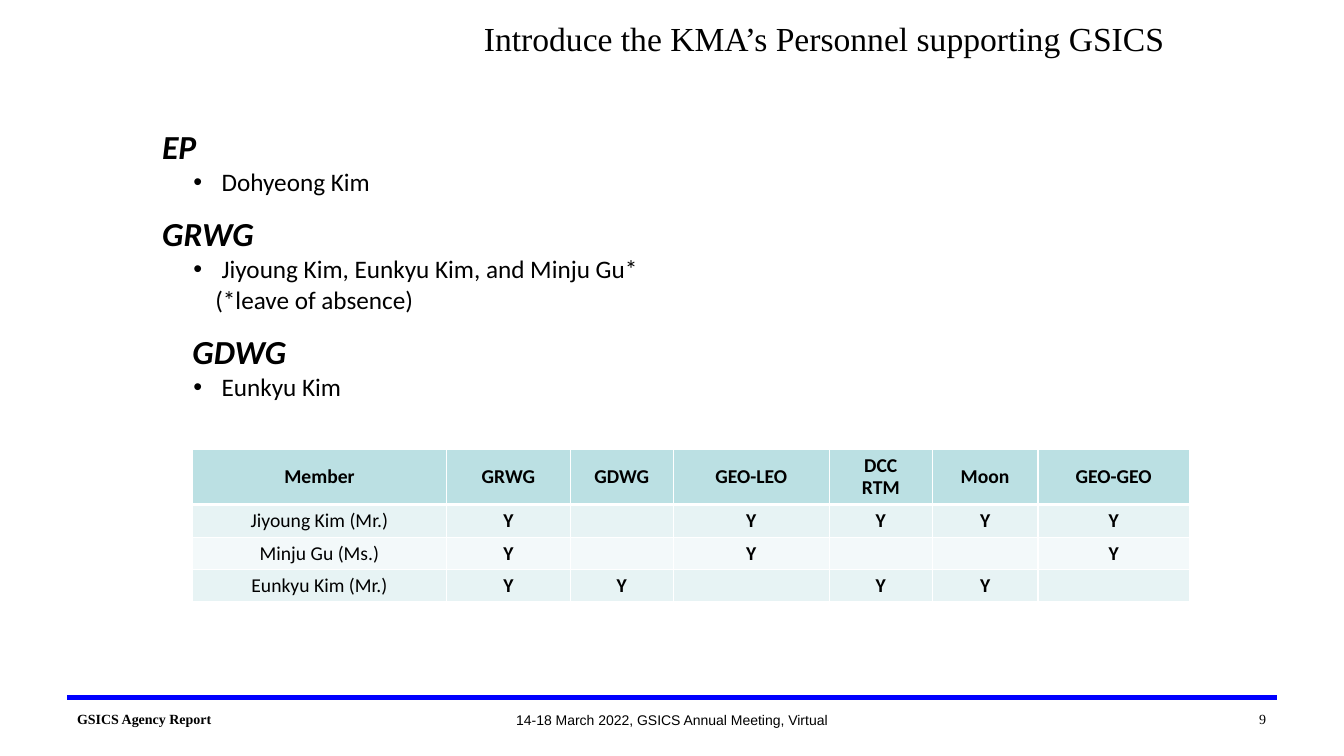
"""Build the slide that introduces the agency personnel supporting GSICS."""
from dataclasses import dataclass

from lxml import etree
from pptx import Presentation
from pptx.dml.color import RGBColor
from pptx.enum.shapes import MSO_CONNECTOR
from pptx.enum.text import MSO_ANCHOR, PP_ALIGN
from pptx.oxml.ns import qn
from pptx.util import Pt

LEFT, CENTER, RIGHT = PP_ALIGN.LEFT, PP_ALIGN.CENTER, PP_ALIGN.RIGHT
MIDDLE, TOP = MSO_ANCHOR.MIDDLE, MSO_ANCHOR.TOP
STRAIGHT = MSO_CONNECTOR.STRAIGHT


@dataclass(frozen=True)
class Theme:
    text: str = "000000"
    rule: str = "0000FF"
    border: str = "FFFFFF"
    header_fill: str = "BBE0E3"
    band_fills: tuple = ("E7F3F4", "F3F9FA")
    serif: str = "Times New Roman"
    sans: str = "Arial"
    body: str = "Calibri"
    title_size: int = 24
    heading_size: int = 24
    name_size: int = 18
    table_size: int = 14
    footer_size: int = 10


theme = Theme()


def add_run(paragraph, text, font, size, bold=False, italic=False):
    run = paragraph.add_run()
    run.text = text
    run.font.name = font
    run.font.size = Pt(size)
    run.font.bold = bold
    run.font.italic = italic
    run.font.color.rgb = RGBColor.from_string(theme.text)


def add_text_frame(slide, left, top, width, height):
    text_box = slide.shapes.add_textbox(Pt(left), Pt(top), Pt(width), Pt(height))
    text_box.text_frame.word_wrap = True
    return text_box.text_frame


presentation = Presentation()
presentation.slide_width = Pt(960)
presentation.slide_height = Pt(540)
slide = presentation.slides.add_slide(presentation.slide_layouts[6])

footer_rule = slide.shapes.add_connector(STRAIGHT, Pt(48), Pt(498.2), Pt(912), Pt(498.2))
footer_rule.line.color.rgb = RGBColor.from_string(theme.rule)
footer_rule.line.width = Pt(3)
etree.SubElement(footer_rule._element.spPr, qn("a:effectLst"))

single_lines = [
    ("14-18 March 2022, GSICS Annual Meeting, Virtual",
     (263.5, 504.5, 432.7, 18), CENTER, theme.sans, theme.footer_size, False),
    ("GSICS Agency Report", (48, 504, 216.7, 18), LEFT, theme.serif, theme.footer_size, True),
    ("Introduce the KMA’s Personnel supporting GSICS",
     (284.4, 9.4, 608.4, 43.9), CENTER, theme.serif, theme.title_size, False),
    ("9", (768.2, 504, 143.3, 18), RIGHT, theme.serif, theme.footer_size, False),
]
for text, box, alignment, font, size, bold in single_lines:
    paragraph = add_text_frame(slide, *box).paragraphs[0]
    paragraph.alignment = alignment
    add_run(paragraph, text, font, size, bold)

groups = [
    ("EP", 0, ["Dohyeong Kim"], None),
    ("GRWG", 0, ["Jiyoung Kim, Eunkyu Kim, and Minju Gu*"], "(*leave of absence)"),
    ("GDWG", 21.6, ["Eunkyu Kim"], None),
]
groups_frame = add_text_frame(slide, 108.7, 86.4, 740.9, 203)
for index, (heading, heading_indent, members, remark) in enumerate(groups):
    paragraph = groups_frame.add_paragraph() if index else groups_frame.paragraphs[0]
    if index:
        paragraph.space_before = Pt(12)
    paragraph._p.get_or_add_pPr().set("marL", str(Pt(heading_indent)))
    add_run(paragraph, heading, theme.body, theme.heading_size, True, True)
    for member in members:
        paragraph = groups_frame.add_paragraph()
        properties = paragraph._p.get_or_add_pPr()
        properties.set("marL", str(Pt(42.5)))
        properties.set("indent", str(Pt(-20.2)))
        etree.SubElement(properties, qn("a:buFont"), typeface=theme.sans)
        etree.SubElement(properties, qn("a:buChar"), char="•")
        add_run(paragraph, member, theme.body, theme.name_size)
    if remark:
        paragraph = groups_frame.add_paragraph()
        paragraph._p.get_or_add_pPr().set("marL", str(Pt(38)))
        add_run(paragraph, remark, theme.body, theme.name_size)

rows = [
    ["Member", "GRWG", "GDWG", "GEO-LEO", "DCC\nRTM", "Moon", "GEO-GEO"],
    ["Jiyoung Kim (Mr.)", "Y", "", "Y", "Y", "Y", "Y"],
    ["Minju Gu (Ms.)", "Y", "", "Y", "", "", "Y"],
    ["Eunkyu Kim (Mr.)", "Y", "Y", "", "Y", "Y", ""],
]
column_widths = [181.4, 88.6, 73.4, 111.6, 73.4, 75.6, 108]
row_heights = [39.3, 23.8, 22.8, 22.8]
table = slide.shapes.add_table(
    len(rows), len(column_widths), Pt(137.5), Pt(321.1),
    Pt(sum(column_widths)), Pt(sum(row_heights))).table
table.first_row = False
table.horz_banding = False
for column, width in zip(table.columns, column_widths):
    column.width = Pt(width)

for row_index, values in enumerate(rows):
    table.rows[row_index].height = Pt(row_heights[row_index])
    is_header = row_index == 0
    fill = theme.header_fill if is_header else theme.band_fills[(row_index - 1) % 2]
    border_widths = {"lnL": 1, "lnR": 1, "lnT": 3 if row_index == 1 else 1,
                     "lnB": 3 if is_header else 1}
    for column_index, value in enumerate(values):
        cell = table.cell(row_index, column_index)
        cell.margin_left = cell.margin_right = Pt(3.6)
        cell.margin_top = cell.margin_bottom = Pt(2.88)
        cell.vertical_anchor = MIDDLE if is_header else TOP
        cell_properties = cell._tc.get_or_add_tcPr()
        for side, width in border_widths.items():
            border = etree.SubElement(cell_properties, qn(f"a:{side}"), w=str(Pt(width)))
            border_fill = etree.SubElement(border, qn("a:solidFill"))
            etree.SubElement(border_fill, qn("a:srgbClr"), val=theme.border)
        cell.fill.solid()
        cell.fill.fore_color.rgb = RGBColor.from_string(fill)
        for line_index, line in enumerate(value.split("\n")):
            text_frame = cell.text_frame
            paragraph = text_frame.add_paragraph() if line_index else text_frame.paragraphs[0]
            paragraph.alignment = CENTER
            if is_header:
                paragraph.line_spacing = 0.9
            if line:
                add_run(paragraph, line, theme.body, theme.table_size,
                        is_header or column_index > 0)
            else:
                etree.SubElement(paragraph._p, qn("a:endParaRPr"), sz=str(theme.table_size * 100))

presentation.save("out.pptx")
